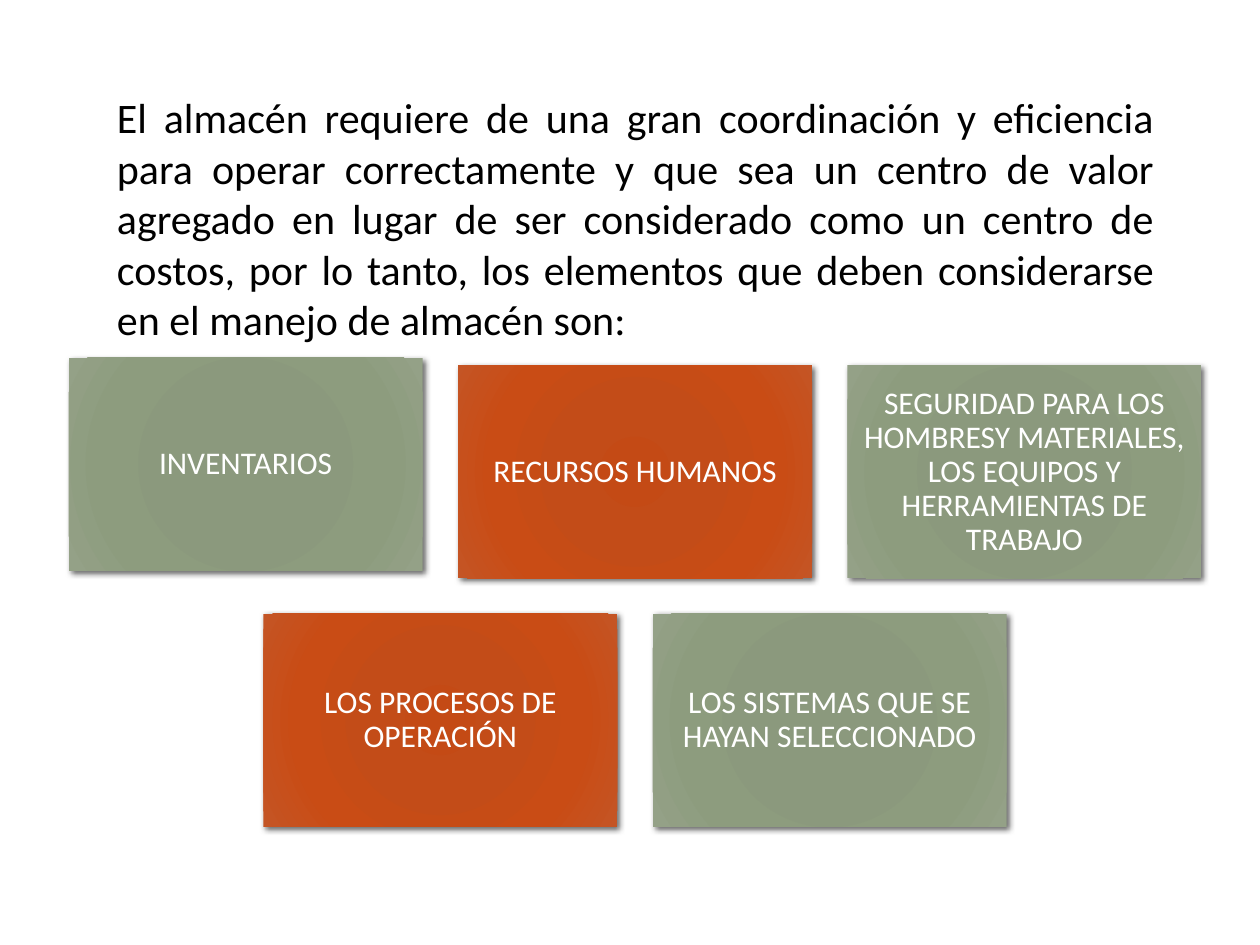
from dataclasses import dataclass

import pptx
import pptx.dml.color
import pptx.enum.shapes
import pptx.enum.text
import pptx.oxml
import pptx.oxml.ns
import pptx.util

Inches = pptx.util.Inches
Align = pptx.enum.text.PP_ALIGN
Anchor = pptx.enum.text.MSO_ANCHOR
NAMESPACE = pptx.oxml.ns.nsdecls("a")

Gradient = tuple[tuple[int, str], ...]


@dataclass(frozen=True)
class Theme:
    font: str = "Calibri"
    intro_size: int = 24
    card_size: int = 18
    ink: str = "000000"
    card_ink: str = "FFFFFF"
    green: Gradient = ((0, "8A987B"), (34, "8B997D"), (70, "8D9C7E"), (100, "94A187"))
    orange: Gradient = ((0, "C44A15"), (34, "C34C18"), (70, "C94C15"), (100, "C45525"))


@dataclass(frozen=True)
class Card:
    label: str
    gradient: Gradient
    lift: float = 0


@dataclass(frozen=True)
class CardRow:
    top: float
    cards: tuple[Card, ...]


THEME = Theme()
CARD_WIDTH, CARD_HEIGHT, CARD_GAP = 2.81, 1.69, 0.28
ROWS_CENTER = 5.04
CARD_MARGIN = 0.07

INTRO = (
    "El almacén requiere de una gran coordinación y eficiencia para operar "
    "correctamente y que sea un centro de valor agregado en lugar de ser "
    "considerado como un centro de costos, por lo tanto, los elementos que "
    "deben considerarse en el manejo de almacén son:"
)
ROWS = (
    CardRow(2.9, (
        Card("INVENTARIOS", THEME.green, lift=0.06),
        Card("RECURSOS HUMANOS", THEME.orange),
        Card("SEGURIDAD PARA LOS HOMBRESY MATERIALES, LOS EQUIPOS Y "
             "HERRAMIENTAS DE TRABAJO", THEME.green),
    )),
    CardRow(4.87, (
        Card("LOS PROCESOS DE OPERACIÓN", THEME.orange),
        Card("LOS SISTEMAS QUE SE HAYAN SELECCIONADO", THEME.green),
    )),
)


def write_text(frame, text: str, *, size: int, color: str, align,
               anchor=Anchor.TOP, line_spacing: float = 1.0) -> None:
    frame.word_wrap = True
    frame.vertical_anchor = anchor
    paragraph = frame.paragraphs[0]
    paragraph.alignment = align
    paragraph.line_spacing = line_spacing
    run = paragraph.add_run()
    run.text = text
    run.font.name = THEME.font
    run.font.size = pptx.util.Pt(size)
    run.font.color.rgb = pptx.dml.color.RGBColor.from_string(color)


def fill_radially(shape, gradient: Gradient) -> None:
    stops = "".join(
        f'<a:gs pos="{percent * 1000}"><a:srgbClr val="{color}"/></a:gs>'
        for percent, color in gradient
    )
    fill = pptx.oxml.parse_xml(
        f'<a:gradFill {NAMESPACE} rotWithShape="1"><a:gsLst>{stops}</a:gsLst>'
        '<a:path path="circle">'
        '<a:fillToRect l="100000" t="100000" r="100000" b="100000"/>'
        "</a:path></a:gradFill>"
    )
    shape.element.spPr.find(pptx.oxml.ns.qn("a:prstGeom")).addnext(fill)


def cast_shadow(shape) -> None:
    """Add a soft black shadow to the lower right; call after the line is set."""
    blur, distance = pptx.util.Pt(3.5), pptx.util.Pt(2)
    shape.element.spPr.append(pptx.oxml.parse_xml(
        f"<a:effectLst {NAMESPACE}>"
        f'<a:outerShdw blurRad="{blur}" dist="{distance}" dir="2700000" rotWithShape="0">'
        '<a:srgbClr val="000000"><a:alpha val="60000"/></a:srgbClr>'
        "</a:outerShdw></a:effectLst>"
    ))


def draw_card(slide, card: Card, left: float, top: float) -> None:
    shape = slide.shapes.add_shape(
        pptx.enum.shapes.MSO_SHAPE.RECTANGLE,
        Inches(left), Inches(top), Inches(CARD_WIDTH), Inches(CARD_HEIGHT),
    )
    fill_radially(shape, card.gradient)
    shape.line.fill.background()
    cast_shadow(shape)
    frame = shape.text_frame
    frame.margin_left = frame.margin_right = Inches(CARD_MARGIN)
    frame.margin_top = frame.margin_bottom = Inches(CARD_MARGIN)
    write_text(frame, card.label, size=THEME.card_size, color=THEME.card_ink,
               align=Align.CENTER, anchor=Anchor.MIDDLE, line_spacing=0.9)


def draw_row(slide, row: CardRow) -> None:
    pitch = CARD_WIDTH + CARD_GAP
    first_left = ROWS_CENTER - (len(row.cards) * pitch - CARD_GAP) / 2
    for column, card in enumerate(row.cards):
        draw_card(slide, card, first_left + column * pitch, row.top - card.lift)


def main() -> None:
    presentation = pptx.Presentation()
    presentation.slide_width = Inches(10)
    presentation.slide_height = Inches(7.5)
    slide = presentation.slides.add_slide(presentation.slide_layouts[6])

    for row in ROWS:
        draw_row(slide, row)

    intro = slide.shapes.add_textbox(
        Inches(0.83), Inches(0.68), Inches(8.43), Inches(2.12))
    write_text(intro.text_frame, INTRO, size=THEME.intro_size,
               color=THEME.ink, align=Align.JUSTIFY)

    presentation.save("out.pptx")


if __name__ == "__main__":
    main()
